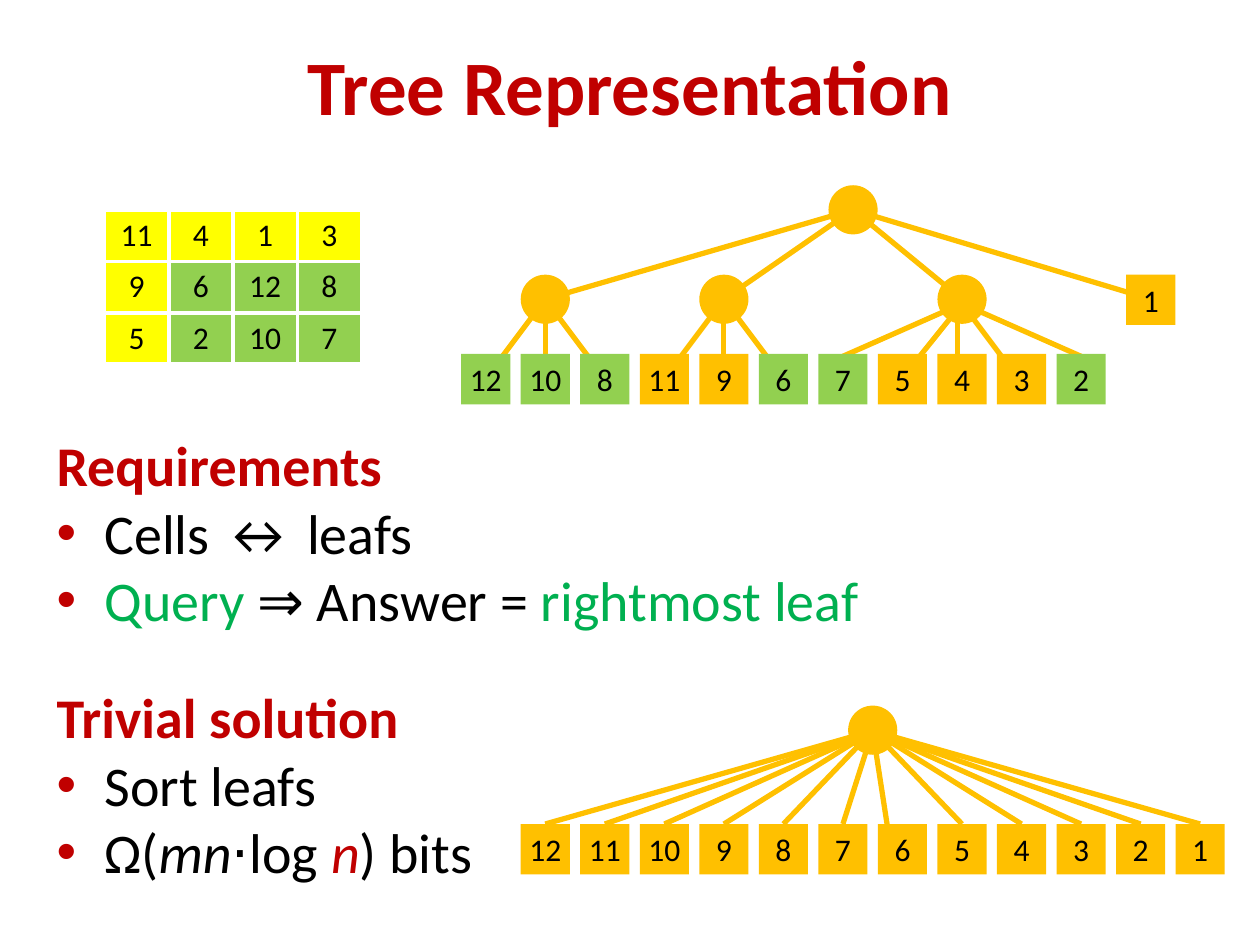
from lxml import etree
from pptx import Presentation, util as u
from pptx.dml.color import RGBColor
from pptx.enum import shapes, text
from pptx.oxml.ns import qn

HUE = {"red": "C00000", "gold": "FFC000", "green": "92D050", "query": "00B050",
       "sun": "FFFF00", "ink": "000000", "white": "FFFFFF"}
WIDE, HIGH = 10, 7.5
NODE = 0.39
STEP = 5.67 / 12
HALF = NODE / 2


def inch(*vals):
    return [u.Inches(v) for v in vals]


def paint(fill, hue):
    fill.solid()
    fill.fore_color.rgb = RGBColor.from_string(HUE[hue])


def apply(thing, form):
    for key, val in form.items():
        setattr(thing, key, val)


def write(para, words, hue="ink", size=18, **form):
    run = para.add_run()
    run.text = words
    apply(run.font, {"name": "Calibri", "size": u.Pt(size), **form})
    run.font.color.rgb = RGBColor.from_string(HUE[hue])


def title(slide, box, words):
    frame = slide.shapes.add_textbox(*inch(*box)).text_frame
    apply(frame, {"word_wrap": True, "vertical_anchor": text.MSO_ANCHOR.MIDDLE})
    para = frame.paragraphs[0]
    para.alignment = text.PP_ALIGN.CENTER
    write(para, words, "red", 44, bold=True)


def bullet(para):
    props = para._p.get_or_add_pPr()
    indent = u.Inches(0.38)
    props.set("marL", str(indent))
    props.set("indent", str(-indent))
    tint = etree.SubElement(props, qn("a:buClr"))
    etree.SubElement(tint, qn("a:srgbClr"), val=HUE["red"])
    etree.SubElement(props, qn("a:buFont"), typeface="Arial")
    etree.SubElement(props, qn("a:buChar"), char="•")


def points(slide, box, head, items):
    frame = slide.shapes.add_textbox(*inch(*box)).text_frame
    frame.word_wrap = True
    write(frame.paragraphs[0], head, "red", 32, bold=True)
    for item in items:
        para = frame.add_paragraph()
        bullet(para)
        for words, hue, slant in item:
            write(para, words, hue, 32, italic=slant)


def border(cell):
    props = cell._tc.get_or_add_tcPr()
    for at, side in enumerate(("lnL", "lnR", "lnT", "lnB")):
        line = etree.Element(qn("a:" + side), w=str(u.Pt(2.25)))
        fill = etree.SubElement(line, qn("a:solidFill"))
        etree.SubElement(fill, qn("a:srgbClr"), val=HUE["white"])
        props.insert(at, line)


def matrix(slide, box, rows, chosen=()):
    grid = slide.shapes.add_table(len(rows), len(rows[0]), *inch(*box)).table
    for r, row in enumerate(rows):
        for c, num in enumerate(row):
            cell = grid.cell(r, c)
            paint(cell.fill, "green" if num in chosen else "sun")
            border(cell)
            para = cell.text_frame.paragraphs[0]
            para.alignment = text.PP_ALIGN.CENTER
            write(para, str(num))


def edge(slide, start, end):
    line = slide.shapes.add_connector(
        shapes.MSO_CONNECTOR.STRAIGHT, *inch(*start, *end))
    paint(line.line.fill, "gold")
    line.line.width = u.Pt(3)
    etree.SubElement(line._element.spPr, qn("a:effectLst"))


def node(slide, left, top, hue="gold", label=None):
    kind = shapes.MSO_SHAPE.OVAL if label is None else shapes.MSO_SHAPE.RECTANGLE
    tall = NODE if label is None else 0.4
    dot = slide.shapes.add_shape(kind, *inch(left, top, NODE, tall))
    dot.shadow.inherit = False
    paint(dot.fill, hue)
    dot.line.fill.background()
    if label is not None:
        frame = dot.text_frame
        apply(frame, {"margin_left": 0, "margin_right": 0, "word_wrap": True,
                      "vertical_anchor": text.MSO_ANCHOR.MIDDLE})
        frame.paragraphs[0].alignment = text.PP_ALIGN.CENTER
        write(frame.paragraphs[0], str(label))


def leaves(slide, left, top, nums, chosen=()):
    for col, num in enumerate(nums):
        node(slide, left + col * STEP, top, "green" if num in chosen else "gold", num)


def deep(slide, box, nums, last, chosen):
    left, top = box
    mid, low = top + 0.71, top + 1.34

    def spot(col, row):
        return left + col * STEP + HALF, row + HALF

    root, inner, lone = 6.17, (1, 4, 8), 11.17
    for col in (*inner, lone):
        edge(slide, spot(root, top), spot(col, mid))
    for hub in inner[:2]:
        for col in (hub - 1, hub, hub + 1):
            edge(slide, spot(col, low), spot(hub, mid))
    for col, drop in ((5.75, 0.07), (6.93, 0.23), (7.92, 0.23), (9, 0.23), (10.25, 0.07)):
        x, y = spot(col, low)
        hub = x if col == 7.92 else spot(8, mid)[0]
        edge(slide, (x, low + drop), (hub, mid + 0.23))
    leaves(slide, left, low, nums, chosen)
    node(slide, left + lone * STEP, mid, label=last)
    for col in inner:
        node(slide, left + col * STEP, mid)
    node(slide, left + root * STEP, top)


def flat(slide, box, nums):
    left, top = box
    root, low = left + 5.5 * STEP, top + 0.94
    for col, num in enumerate(nums):
        x, y = left + col * STEP + HALF, low
        if num == 6:
            x, y = x - 0.11, y + 0.08
        edge(slide, (x, y), (root + HALF, top + 0.2))
    leaves(slide, left, low, nums)
    node(slide, root, top)


def main():
    deck = Presentation()
    deck.slide_width, deck.slide_height = inch(WIDE, HIGH)
    slide = deck.slides.add_slide(deck.slide_layouts[6])
    green = {6, 12, 8, 2, 10, 7}
    title(slide, (0.5, 0.05, 9, 1.25), "Tree Representation")
    for chosen in ((), green):
        matrix(slide, (0.83, 1.67, 2.04, 1.22),
               [[11, 4, 1, 3], [9, 6, 12, 8], [5, 2, 10, 7]], chosen)
    deep(slide, (3.66, 1.47), [12, 10, 8, 11, 9, 6, 7, 5, 4, 3, 2], 1, green)
    points(slide, (0.35, 3.37, 6.69, 2.08), "Requirements", [
        [("Cells ↔ leafs", "ink", False)],
        [("Query ", "query", False), ("⇒ Answer = ", "ink", False),
         ("rightmost leaf", "query", False)]])
    flat(slide, (3.66 + STEP, 5.6), range(12, 0, -1))
    points(slide, (0.35, 5.37, 6.69, 2.08), "Trivial solution", [
        [("Sort leafs", "ink", False)],
        [("Ω(", "ink", False), ("mn", "ink", True), ("⋅log ", "ink", False),
         ("n", "red", True), (") bits", "ink", False)]])
    deck.save("out.pptx")


if __name__ == "__main__":
    main()
